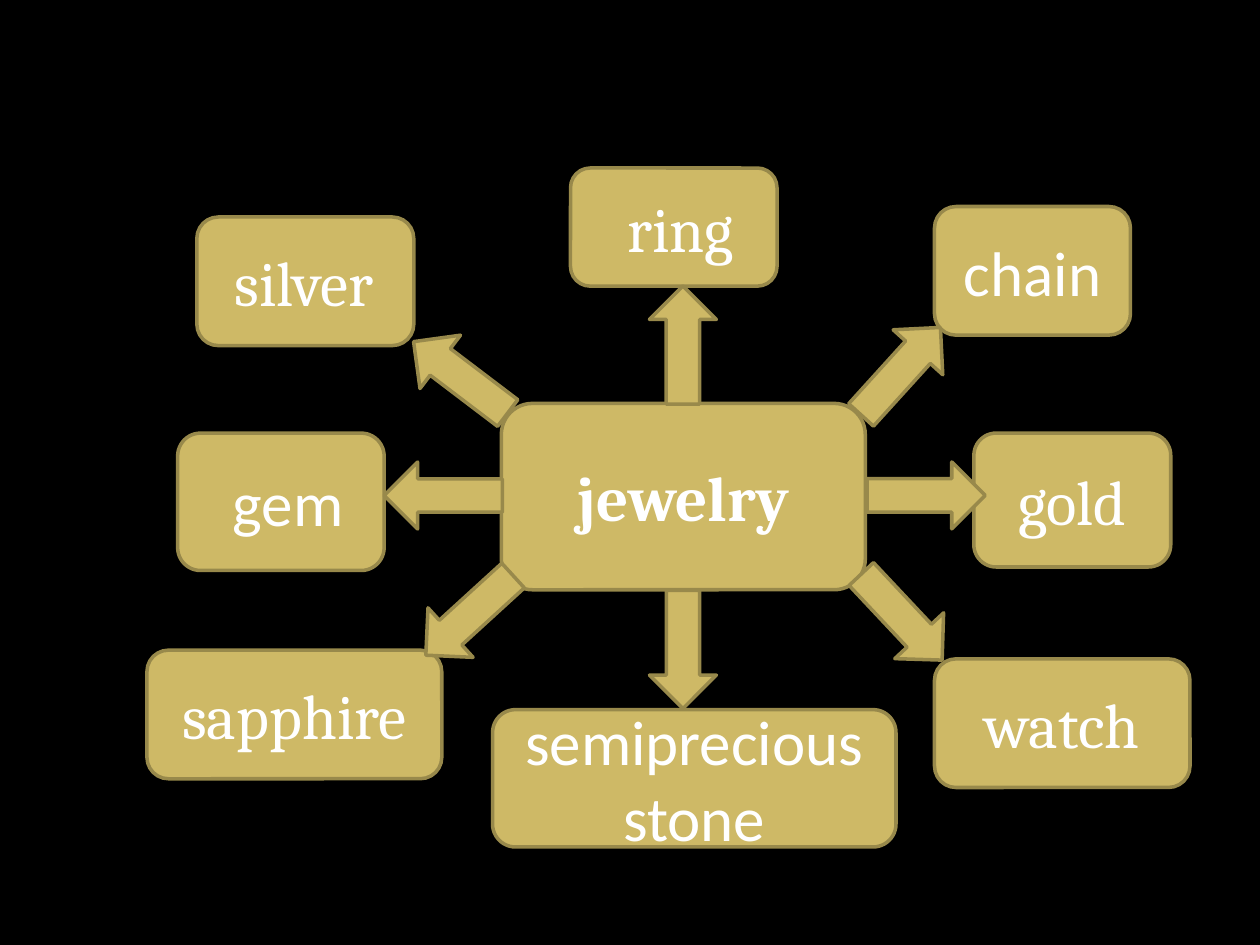
from dataclasses import dataclass

from pptx import Presentation
from pptx.dml.color import RGBColor
from pptx.enum.shapes import MSO_SHAPE
from pptx.enum.text import MSO_ANCHOR, PP_ALIGN
from pptx.util import Pt


@dataclass(frozen=True)
class Theme:
    background: RGBColor = RGBColor(0x00, 0x00, 0x00)
    gold: RGBColor = RGBColor(0xCE, 0xB9, 0x66)
    outline: RGBColor = RGBColor(0x98, 0x89, 0x4B)
    text: RGBColor = RGBColor(0xFF, 0xFF, 0xFF)
    word_size: float = 36
    outline_width: float = 2
    serif: str = "Cambria"
    sans: str = "Calibri"


THEME = Theme()
ARROW_SIZE = (67.5, 38.25)

WORDS = [
    ("silver", (112.5, 124, 124, 73.5),
     dict(align=PP_ALIGN.LEFT, margin=43.2, indent=-32.4, before=7.2)),
    (" ring", (326, 96, 118, 67.5), {}),
    ("chain", (534, 118, 112, 73.5), dict(font=THEME.sans)),
    ("gold", (556.5, 247.5, 112.5, 76.5), {}),
    ("watch", (534, 376.5, 146, 73.5), {}),
    ("semiprecious stone", (281.5, 405.5, 230.5, 78.5), dict(font=THEME.sans)),
    ("sapphire", (84, 371.5, 168.5, 73.5), {}),
    (" gem", (101.5, 247.5, 118, 78.5), dict(font=THEME.sans)),
    ("jewelry", (286.5, 230.5, 208, 106.5), dict(bold=True)),
]

ARROWS = [
    (356.5, 178, 270),
    (481, 193, 312.2),
    (495.5, 264, 0),
    (229.5, 196.5, 217.2),
    (219.5, 264, 180),
    (234.5, 332.5, 137.6),
    (356.5, 352, 90),
    (481.5, 333.5, 46.8),
]


def write_text(frame, text, font=THEME.serif, bold=False,
               align=PP_ALIGN.CENTER, margin=0, indent=0, before=0):
    frame.word_wrap = True
    frame.vertical_anchor = MSO_ANCHOR.MIDDLE
    paragraph = frame.paragraphs[0]
    paragraph.alignment = align
    paragraph.space_before = Pt(before)
    if margin:
        properties = paragraph._p.get_or_add_pPr()
        properties.set("marL", str(Pt(margin)))
        properties.set("indent", str(Pt(indent)))
    run = paragraph.add_run()
    run.text = text
    run.font.name = font
    run.font.size = Pt(THEME.word_size)
    run.font.bold = bold
    run.font.color.rgb = THEME.text


def add_gold_shape(slide, preset, box):
    shape = slide.shapes.add_shape(preset, *map(Pt, box))
    shape.shadow.inherit = False
    shape.fill.solid()
    shape.fill.fore_color.rgb = THEME.gold
    shape.line.color.rgb = THEME.outline
    shape.line.width = Pt(THEME.outline_width)
    return shape


def add_word(slide, word, box, style):
    card = add_gold_shape(slide, MSO_SHAPE.FLOWCHART_ALTERNATE_PROCESS, box)
    write_text(card.text_frame, word, **style)


def add_arrow(slide, left, top, angle):
    arrow = add_gold_shape(slide, MSO_SHAPE.RIGHT_ARROW, (left, top, *ARROW_SIZE))
    arrow.rotation = angle


def main():
    deck = Presentation()
    deck.slide_width, deck.slide_height = Pt(720), Pt(540)
    slide = deck.slides.add_slide(deck.slide_layouts[6])
    slide.background.fill.solid()
    slide.background.fill.fore_color.rgb = THEME.background
    for word, box, style in WORDS:
        add_word(slide, word, box, style)
    for left, top, angle in ARROWS:
        add_arrow(slide, left, top, angle)
    deck.save("out.pptx")


if __name__ == "__main__":
    main()
